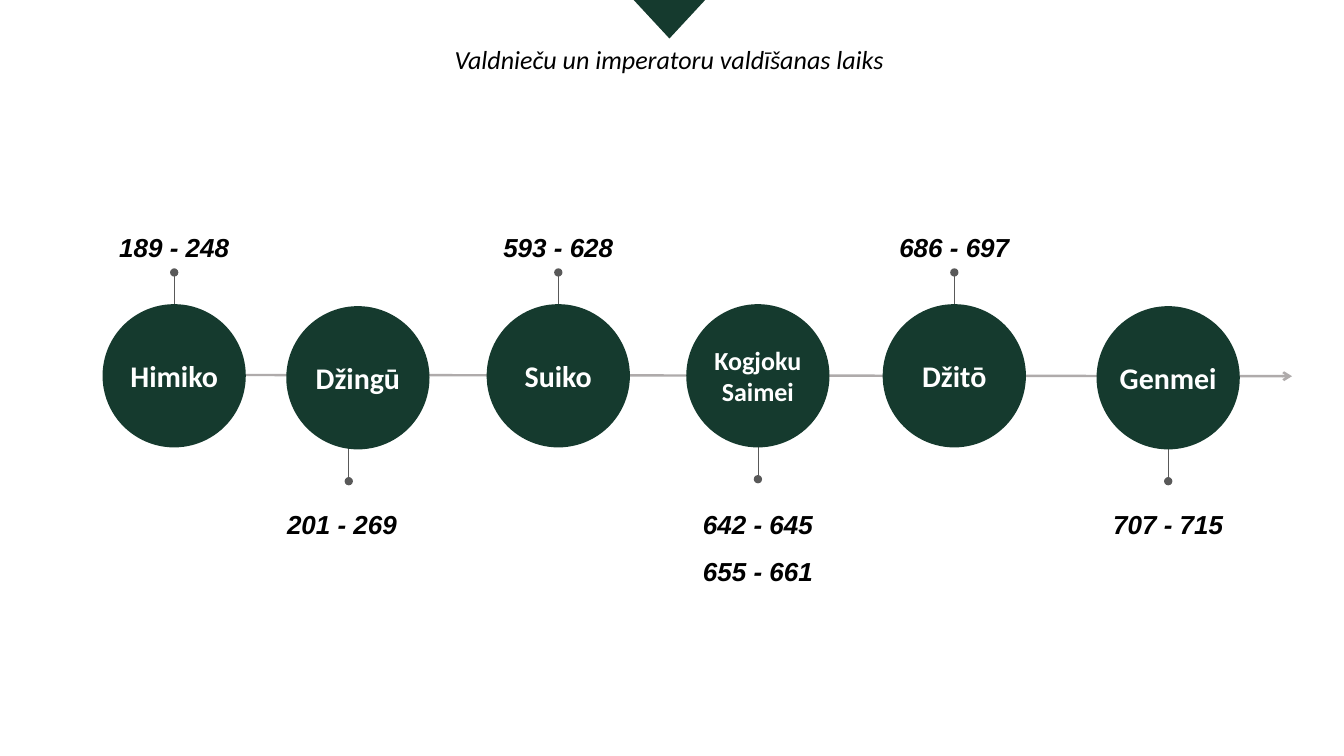
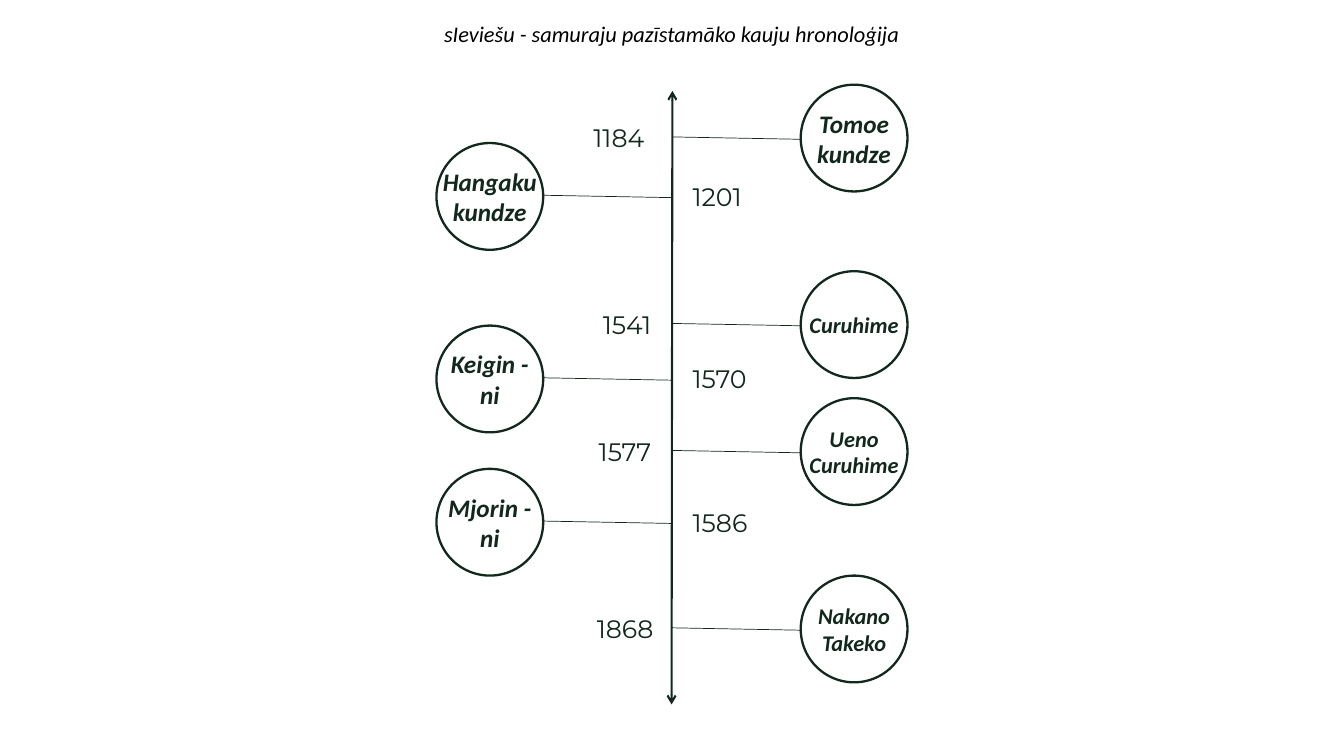
from collections import namedtuple
from dataclasses import dataclass

from lxml.etree import SubElement
from pptx import Presentation
from pptx.dml.color import RGBColor
from pptx.enum.shapes import MSO_CONNECTOR as Link, MSO_SHAPE as Preset
from pptx.enum.text import MSO_ANCHOR as Anchor, MSO_AUTO_SIZE as AutoSize, PP_ALIGN as Align
from pptx.oxml.ns import qn
from pptx.util import Cm, Pt


@dataclass(frozen=True)
class Type:
    font: str
    size: float
    color: str
    bold: bool = False
    italic: bool = False


@dataclass(frozen=True)
class Theme:
    green: str = "153A2E"
    ink: str = "12281C"
    axis: str = "AFABAB"
    stem: str = "595959"
    reign_title: Type = Type("Calibri", 18.6, "000000", italic=True)
    battle_title: Type = Type("Calibri", 16, "000000", italic=True)
    ruler: Type = Type("Calibri", 21.4, "FFFFFF", bold=True)
    ruler_pair: Type = Type("Calibri", 18.6, "FFFFFF", bold=True)
    reign: Type = Type("Arial", 18.6, "000000", bold=True, italic=True)
    year: Type = Type("Montserrat", 18, ink)
    warrior: Type = Type("Calibri", 18, ink, bold=True, italic=True)
    warrior_long: Type = Type("Calibri", 16, ink, bold=True, italic=True)


THEME = Theme()
SLIDE_WIDTH, SLIDE_HEIGHT = 33.87, 19.05

Ruler = namedtuple("Ruler", "name type x y above reign stem_shift reign_shift", defaults=(0, 0))
Battle = namedtuple("Battle", "year warrior type y side year_gap", defaults=(0.27,))

RULERS = (
    Ruler("Himiko", THEME.ruler, 4.39, 9.47, True, "189 - 248"),
    Ruler("Džingū", THEME.ruler, 9.02, 9.52, False, "201 - 269", -0.23, -0.4),
    Ruler("Suiko", THEME.ruler, 14.07, 9.47, True, "593 - 628"),
    Ruler("Kogjoku\nSaimei", THEME.ruler_pair, 19.1, 9.47, False, "642 - 645\n655 - 661"),
    Ruler("Džitō", THEME.ruler, 24.05, 9.47, True, "686 - 697"),
    Ruler("Genmei", THEME.ruler, 29.44, 9.52, False, "707 - 715"),
)

LEFT, RIGHT = -1, 1
BATTLES = (
    Battle("1184", "Tomoe\vkundze", THEME.warrior, 3.48, RIGHT, 0.45),
    Battle("1201", "Hangaku\vkundze", THEME.warrior, 4.95, LEFT),
    Battle("1541", "Curuhime", THEME.warrior_long, 8.18, RIGHT),
    Battle("1570", "Keigin -\vni", THEME.warrior, 9.55, LEFT),
    Battle("1577", "Ueno\vCuruhime", THEME.warrior_long, 11.38, RIGHT),
    Battle("1586", "Mjorin -\vni", THEME.warrior, 13.16, LEFT),
    Battle("1868", "Nakano\nTakeko", THEME.warrior_long, 15.85, RIGHT, 0.22),
)


def rgb(color):
    return RGBColor.from_string(color)


def write(frame, text, style, align=Align.CENTER, spacing=None):
    frame.text = text
    for paragraph in frame.paragraphs:
        paragraph.alignment = align
        if spacing:
            paragraph.line_spacing = spacing
        for run in paragraph.runs:
            font = run.font
            font.name, font.size = style.font, Pt(style.size)
            font.bold, font.italic = style.bold, style.italic
            font.color.rgb = rgb(style.color)


def add_titled_slide(deck, text, style, left, top, width, height):
    slide = deck.slides.add_slide(deck.slide_layouts[5])
    title = slide.shapes.title
    title.left, title.top, title.width, title.height = map(Cm, (left, top, width, height))
    title.text_frame.auto_size = AutoSize.NONE
    title.text_frame.vertical_anchor = Anchor.MIDDLE
    write(title.text_frame, text, style)
    return slide


def add_label(slide, text, style, left, top, width, height, align=Align.CENTER, spacing=None):
    label = slide.shapes.add_textbox(Cm(left), Cm(top), Cm(width), Cm(height))
    label.text_frame.word_wrap = True
    write(label.text_frame, text, style, align, spacing)


def add_figure(slide, preset, left, top, width, height, fill=None, outline=None, weight=1):
    figure = slide.shapes.add_shape(preset, Cm(left), Cm(top), Cm(width), Cm(height))
    figure.shadow.inherit = False
    if fill:
        figure.fill.solid()
        figure.fill.fore_color.rgb = rgb(fill)
    else:
        figure.fill.background()
    if outline:
        figure.line.color.rgb = rgb(outline)
        figure.line.width = Pt(weight)
    else:
        figure.line.fill.background()
    return figure


def add_circle(slide, text, style, x, y, diameter, **look):
    circle = add_figure(slide, Preset.OVAL, x - diameter / 2, y - diameter / 2,
                        diameter, diameter, **look)
    frame = circle.text_frame
    frame.margin_left = frame.margin_right = frame.margin_top = frame.margin_bottom = 0
    frame.word_wrap = False
    frame.vertical_anchor = Anchor.MIDDLE
    write(frame, text, style)


def add_line(slide, start, end, color, weight, head=None, tail=None):
    line = slide.shapes.add_connector(Link.STRAIGHT, *map(Cm, (*start, *end)))
    line.line.color.rgb = rgb(color)
    line.line.width = Pt(weight)
    outline = line.line._get_or_add_ln()
    for tag, kind in (("a:headEnd", head), ("a:tailEnd", tail)):
        if kind:
            SubElement(outline, qn(tag)).set("type", kind)
    SubElement(line._element.spPr, qn("a:effectLst"))


def add_ruler(slide, ruler):
    diameter, stem, reign_width = 3.61, 0.8, 4.24
    direction = -1 if ruler.above else 1
    edge = ruler.y + direction * diameter / 2
    stem_x = ruler.x + ruler.stem_shift
    add_line(slide, (stem_x, edge - direction * 0.05), (stem_x, edge + direction * stem),
             THEME.stem, 0.5, tail="oval")
    add_circle(slide, ruler.name, ruler.type, ruler.x, ruler.y, diameter, fill=THEME.green)
    lines = ruler.reign.count("\n") + 1
    add_label(slide, ruler.reign, THEME.reign,
              ruler.x + ruler.reign_shift - reign_width / 2,
              5.31 if ruler.above else 12.29, reign_width, 0.26 + 1.19 * lines, spacing=1.5)


def add_battle(slide, battle, axis_x):
    diameter, reach, slope = 2.69, 4.59, 0.03
    year_width, year_height = 2.69, 1.02
    warrior_x = axis_x + battle.side * reach
    rim_x = warrior_x - battle.side * diameter / 2
    start_x, end_x = sorted((axis_x, rim_x))
    add_line(slide, (start_x, battle.y - slope), (end_x, battle.y + slope), THEME.ink, 0.5)
    add_circle(slide, battle.warrior, battle.type, warrior_x, battle.y, diameter,
               outline=THEME.ink, weight=1.63)
    if battle.side == RIGHT:
        year_left, align = axis_x - battle.year_gap - year_width, Align.RIGHT
    else:
        year_left, align = axis_x + battle.year_gap, Align.LEFT
    add_label(slide, battle.year, THEME.year, year_left, battle.y - year_height / 2,
              year_width, year_height, align)


def build_reigns(deck):
    slide = add_titled_slide(deck, "Valdnieču un imperatoru valdīšanas laiks",
                             THEME.reign_title, 9.32, 0.97, 15.09, 1.04)
    marker = add_figure(slide, Preset.ISOSCELES_TRIANGLE, 15.97, 0, 1.8, 0.97, fill=THEME.green)
    marker.rotation = 180
    add_line(slide, (6.17, 9.45), (32.56, 9.48), THEME.axis, 1.75, tail="arrow")
    for ruler in RULERS:
        add_ruler(slide, ruler)


def build_battles(deck):
    slide = add_titled_slide(deck, "sIeviešu - samuraju pazīstamāko kauju hronoloģija",
                             THEME.battle_title, 8.05, 0.38, 17.75, 0.94)
    axis_x = SLIDE_WIDTH / 2
    add_line(slide, (axis_x + 0.01, 2.29), (axis_x - 0.01, 17.75), THEME.ink, 1.5,
             head="arrow", tail="arrow")
    for battle in BATTLES:
        add_battle(slide, battle, axis_x)


def main():
    deck = Presentation()
    deck.slide_width, deck.slide_height = Cm(SLIDE_WIDTH), Cm(SLIDE_HEIGHT)
    build_reigns(deck)
    build_battles(deck)
    deck.save("out.pptx")


if __name__ == "__main__":
    main()
